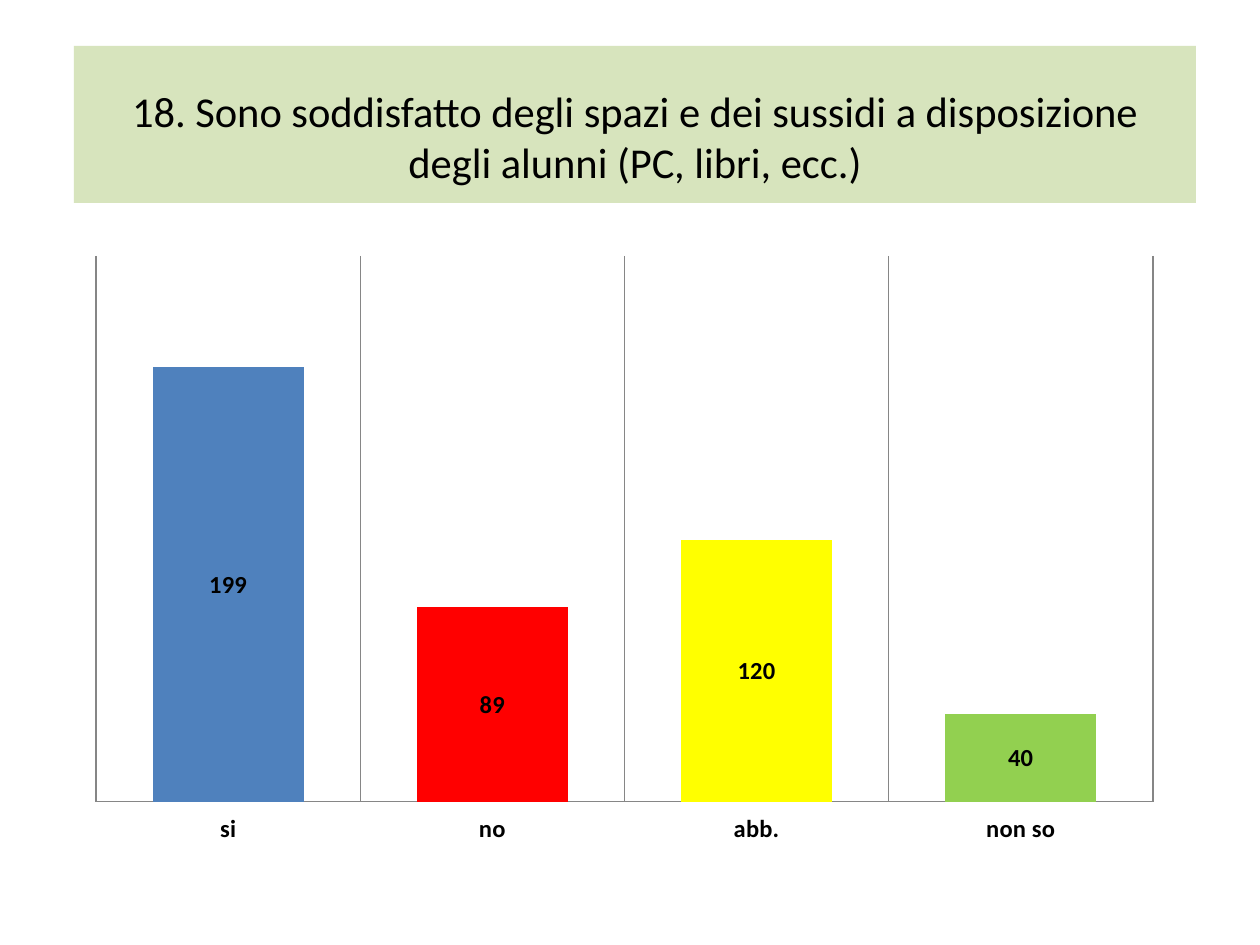
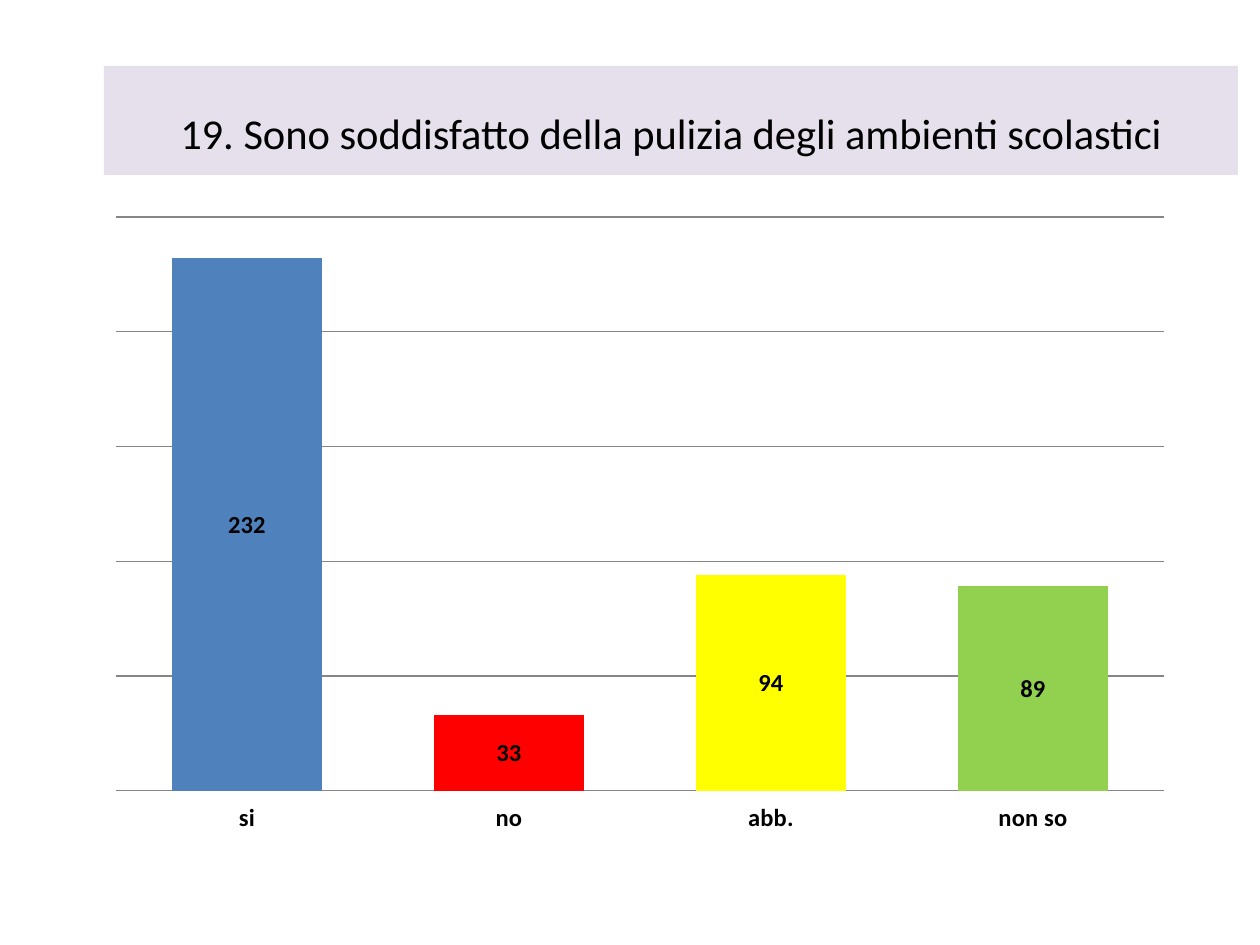
from pptx import Presentation
from pptx.chart.data import CategoryChartData
from pptx.dml.color import RGBColor
from pptx.enum.chart import XL_CHART_TYPE, XL_LABEL_POSITION, XL_TICK_LABEL_POSITION, XL_TICK_MARK
from pptx.enum.shapes import MSO_SHAPE
from pptx.enum.text import MSO_ANCHOR, PP_ALIGN
from pptx.oxml import parse_xml
from pptx.oxml.ns import nsdecls, qn
from pptx.util import Emu, Pt

STACKED = XL_CHART_TYPE.COLUMN_STACKED
LABEL_CENTER = XL_LABEL_POSITION.CENTER
LABELS_LOW = XL_TICK_LABEL_POSITION.LOW
NO_TICK = XL_TICK_MARK.NONE
RECTANGLE = MSO_SHAPE.RECTANGLE
MIDDLE = MSO_ANCHOR.MIDDLE
CENTER = PP_ALIGN.CENTER

PX_PER_INCH = 126
SLIDE_SIZE = (1260, 945)
FONT = "Calibri"
BLACK = "000000"
AXIS_GRAY = "868686"
ANSWERS = {"si": "4F81BD", "no": "FF0000", "abb.": "FFFF00", "non so": "92D050"}
TITLE_FONT = {"name": FONT, "size": Pt(24.3), "bold": False}
CHART_FONT = {"name": FONT, "size": Pt(14), "bold": True}
TITLE_FRAME = {"word_wrap": True, "vertical_anchor": MIDDLE}

QUESTIONS = [
    {
        "title": "18. Sono soddisfatto degli spazi e dei sussidi a disposizione "
                 "degli alunni (PC, libri, ecc.)",
        "band": "D7E4BD",
        "title_box": (74, 46, 1122, 157),
        "chart_box": (74, 244, 1101, 605),
        "plot_box": (22, 12, 1057, 546),
        "counts": (199, 89, 120, 40),
        "vertical_grid": True,
    },
    {
        "title": "19. Sono soddisfatto della pulizia degli ambienti scolastici",
        "band": "E6E0EC",
        "title_box": (104, 66, 1134, 109),
        "chart_box": (94, 204, 1091, 635),
        "plot_box": (22, 13, 1048, 574),
        "counts": (232, 33, 94, 89),
        "vertical_grid": False,
    },
]


def px(length):
    return Emu(round(length * 914400 / PX_PER_INCH))


def color(hex_value):
    return RGBColor.from_string(hex_value)


def apply(target, values):
    for name, value in values.items():
        setattr(target, name, value)


def style_font(font, values):
    apply(font, values)
    font.color.rgb = color(BLACK)


def paint(fill, hex_value):
    fill.solid()
    fill.fore_color.rgb = color(hex_value)


def draw_line(line):
    line.color.rgb = color(AXIS_GRAY)
    line.width = Pt(0.75)


def add_title_band(slide, box, text, fill):
    band = slide.shapes.add_shape(RECTANGLE, *map(px, box))
    band.shadow.inherit = False
    band.line.fill.background()
    paint(band.fill, fill)
    frame = band.text_frame
    apply(frame, TITLE_FRAME)
    frame.margin_top, frame.margin_bottom = px(29), px(6)
    heading = frame.paragraphs[0]
    heading.text = text
    heading.alignment = CENTER
    style_font(heading.font, TITLE_FONT)


def place_plot(chart, chart_box, plot_box):
    """Fix the inner plot area, given in px from the chart's top left corner."""
    width, height = chart_box[2:]
    shares = zip("xywh", plot_box, (width, height, width, height))
    parts = "".join(f'<c:{key} val="{part / whole:.4f}"/>' for key, part, whole in shares)
    plot_area = chart.plots[0]._element.getparent()
    for old_layout in plot_area.findall(qn("c:layout")):
        plot_area.remove(old_layout)
    plot_area.insert(0, parse_xml(
        f'<c:layout {nsdecls("c")}><c:manualLayout><c:layoutTarget val="inner"/>'
        f'<c:xMode val="edge"/><c:yMode val="edge"/>{parts}</c:manualLayout></c:layout>'))


def style_axes(chart, vertical_grid):
    answers, counts = chart.category_axis, chart.value_axis
    apply(answers, {"major_tick_mark": NO_TICK, "tick_label_position": LABELS_LOW,
                    "has_major_gridlines": vertical_grid})
    style_font(answers.tick_labels.font, CHART_FONT)
    draw_line(answers.format.line)
    apply(counts, {"minimum_scale": 0, "maximum_scale": 250, "major_unit": 50,
                   "visible": False, "has_major_gridlines": not vertical_grid})
    draw_line((answers if vertical_grid else counts).major_gridlines.format.line)


def add_answer_chart(slide, box, plot_box, counts, vertical_grid):
    data = CategoryChartData()
    data.categories = list(ANSWERS)
    data.add_series("Series 1", counts)
    chart = slide.shapes.add_chart(STACKED, *map(px, box), data).chart
    apply(chart, {"has_legend": False, "has_title": False})
    style_font(chart.font, {"name": FONT, "size": Pt(10)})
    columns = chart.plots[0]
    apply(columns, {"gap_width": 75, "overlap": 100, "vary_by_categories": False,
                    "has_data_labels": True})
    apply(columns.data_labels, {"show_value": True, "position": LABEL_CENTER})
    style_font(columns.data_labels.font, CHART_FONT)
    series = columns.series[0]
    for index, fill in enumerate(ANSWERS.values()):
        paint(series.points[index].format.fill, fill)
    style_axes(chart, vertical_grid)
    place_plot(chart, box, plot_box)


def add_question_slide(deck, question):
    slide = deck.slides.add_slide(deck.slide_layouts[6])
    add_title_band(slide, question["title_box"], question["title"], question["band"])
    add_answer_chart(slide, question["chart_box"], question["plot_box"],
                     question["counts"], question["vertical_grid"])


def main():
    deck = Presentation()
    deck.slide_width, deck.slide_height = map(px, SLIDE_SIZE)
    for question in QUESTIONS:
        add_question_slide(deck, question)
    deck.save("out.pptx")


if __name__ == "__main__":
    main()
